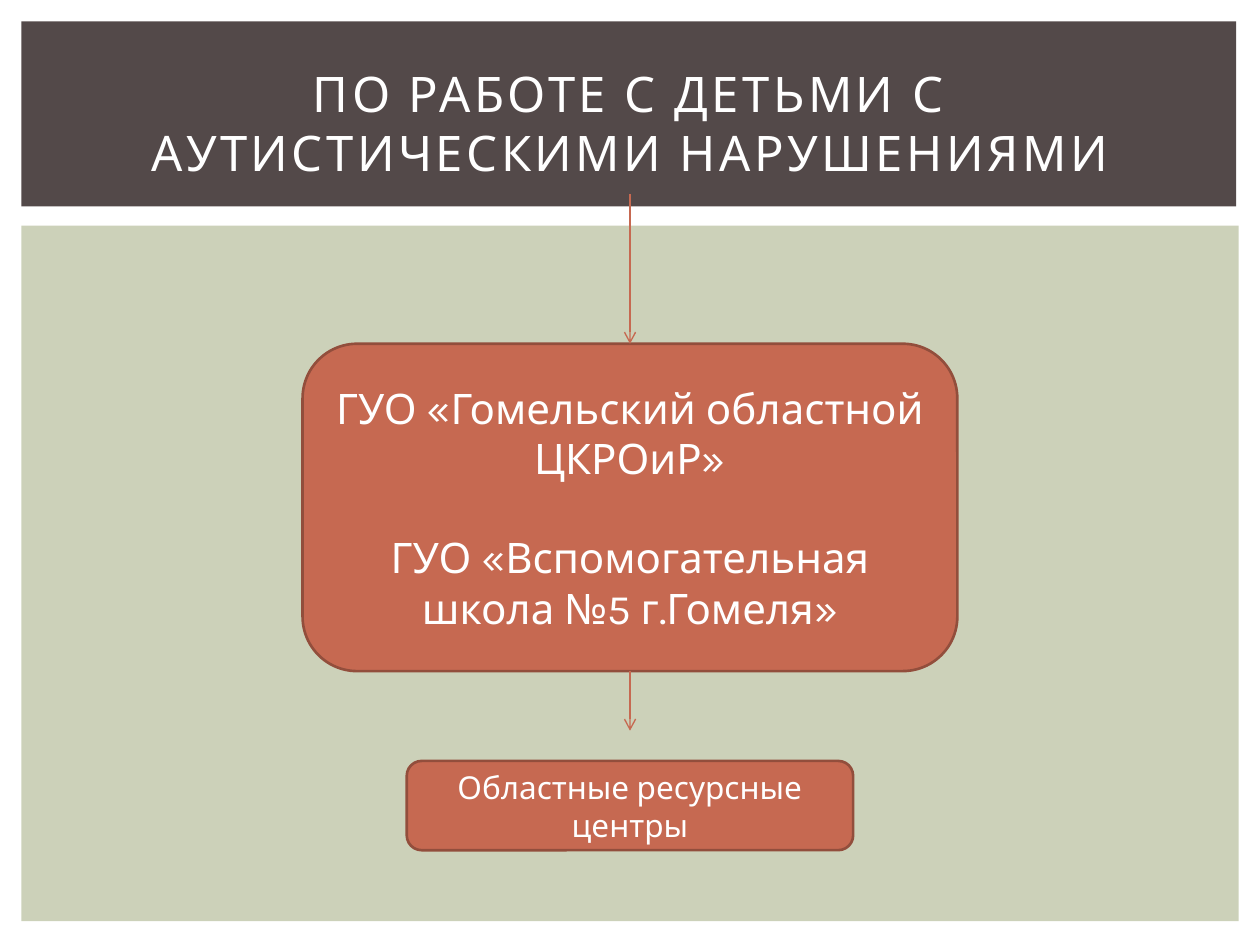
from typing import NamedTuple

import pptx
import pptx.dml.color
import pptx.enum.shapes
import pptx.enum.text
import pptx.oxml
import pptx.oxml.ns
import pptx.util

Cm = pptx.util.Cm
Pt = pptx.util.Pt
RGBColor = pptx.dml.color.RGBColor
Kind = pptx.enum.shapes.MSO_SHAPE

WHITE = RGBColor(0xFF, 0xFF, 0xFF)
SAGE = RGBColor(0xCC, 0xD1, 0xB9)
BROWN = RGBColor(0x53, 0x49, 0x49)
CLAY = RGBColor(0xC6, 0x69, 0x51)
RUST = RGBColor(0x92, 0x4E, 0x3C)

WIDTH, HEIGHT = 25.4, 19.05
MID = WIDTH / 2
FRAME = {
    "word_wrap": True,
    "auto_size": pptx.enum.text.MSO_AUTO_SIZE.NONE,
    "vertical_anchor": pptx.enum.text.MSO_ANCHOR.MIDDLE,
}


class Band(NamedTuple):
    top: float
    width: float
    height: float
    fill: RGBColor


class Box(NamedTuple):
    top: float
    width: float
    height: float
    size: int
    texts: tuple[str, ...]


class Arrow(NamedTuple):
    start: float
    end: float


BANDS = (
    Band(4.55, 24.54, 14.02, SAGE),
    Band(0.43, 24.49, 3.73, BROWN),
)
BOXES = (
    Box(6.93, 13.2, 6.6, 24, (
        "ГУО «Гомельский областной ЦКРОиР»",
        "ГУО «Вспомогательная школа №5 г.Гомеля»",
    )),
    Box(15.34, 9, 1.8, 18, ("Областные ресурсные центры",)),
)
ARROWS = (Arrow(3.91, 6.93), Arrow(13.53, 14.73))


def style(target, values: dict) -> None:
    for name, value in values.items():
        setattr(target, name, value)


def write(frame, texts: tuple[str, ...], size: int) -> None:
    style(frame, FRAME)
    for i, text in enumerate(texts):
        para = frame.paragraphs[0] if i == 0 else frame.add_paragraph()
        para.alignment = pptx.enum.text.PP_ALIGN.CENTER
        if i:
            para.space_before = Pt(28)
        run = para.add_run()
        run.text = text
        style(run.font, {"name": "Karla", "size": Pt(size), "bold": False})
        run.font.color.rgb = WHITE


def add_band(slide, band: Band) -> None:
    shape = slide.shapes.add_shape(
        Kind.RECTANGLE, Cm(0.43), Cm(band.top), Cm(band.width), Cm(band.height))
    shape.shadow.inherit = False
    shape.fill.solid()
    shape.fill.fore_color.rgb = band.fill
    shape.line.fill.background()


def add_title(slide, text: str) -> None:
    title = slide.shapes.title
    style(title, {"left": Cm(1.06), "top": Cm(1),
                  "width": Cm(23.28), "height": Cm(2.92)})
    write(title.text_frame, (text,), 28)
    # Letter spacing, in hundredths of a point
    for props in title.element.iter(pptx.oxml.ns.qn("a:rPr")):
        props.set("spc", "200")
    # Bring the title in front of the bands
    tree = title.element.getparent()
    tree.append(title.element)


def add_box(slide, box: Box) -> None:
    shape = slide.shapes.add_shape(
        Kind.ROUNDED_RECTANGLE, Cm(MID - box.width / 2), Cm(box.top),
        Cm(box.width), Cm(box.height))
    shape.shadow.inherit = False
    shape.fill.solid()
    shape.fill.fore_color.rgb = CLAY
    shape.line.color.rgb = RUST
    shape.line.width = Pt(1.5)
    write(shape.text_frame, box.texts, box.size)


def add_arrow(slide, arrow: Arrow) -> None:
    link = slide.shapes.add_connector(
        pptx.enum.shapes.MSO_CONNECTOR.STRAIGHT,
        Cm(MID), Cm(arrow.start), Cm(MID), Cm(arrow.end))
    link.line.color.rgb = CLAY
    link.line.width = Pt(0.79)
    props = link.element.spPr
    head = pptx.oxml.parse_xml(
        f'<a:tailEnd {pptx.oxml.ns.nsdecls("a")} type="arrow"/>')
    props.find(pptx.oxml.ns.qn("a:ln")).append(head)
    props.append(pptx.oxml.parse_xml(
        f'<a:effectLst {pptx.oxml.ns.nsdecls("a")}/>'))


def main() -> None:
    deck = pptx.Presentation()
    style(deck, {"slide_width": Cm(WIDTH), "slide_height": Cm(HEIGHT)})
    slide = deck.slides.add_slide(deck.slide_layouts.get_by_name("Title Only"))

    # Background and heading
    for band in BANDS:
        add_band(slide, band)
    add_title(slide, "ПО РАБОТЕ С ДЕТЬМИ С АУТИСТИЧЕСКИМИ НАРУШЕНИЯМИ")

    # Chain of centres
    for box in BOXES:
        add_box(slide, box)
    for arrow in ARROWS:
        add_arrow(slide, arrow)

    deck.save("out.pptx")


if __name__ == "__main__":
    main()
